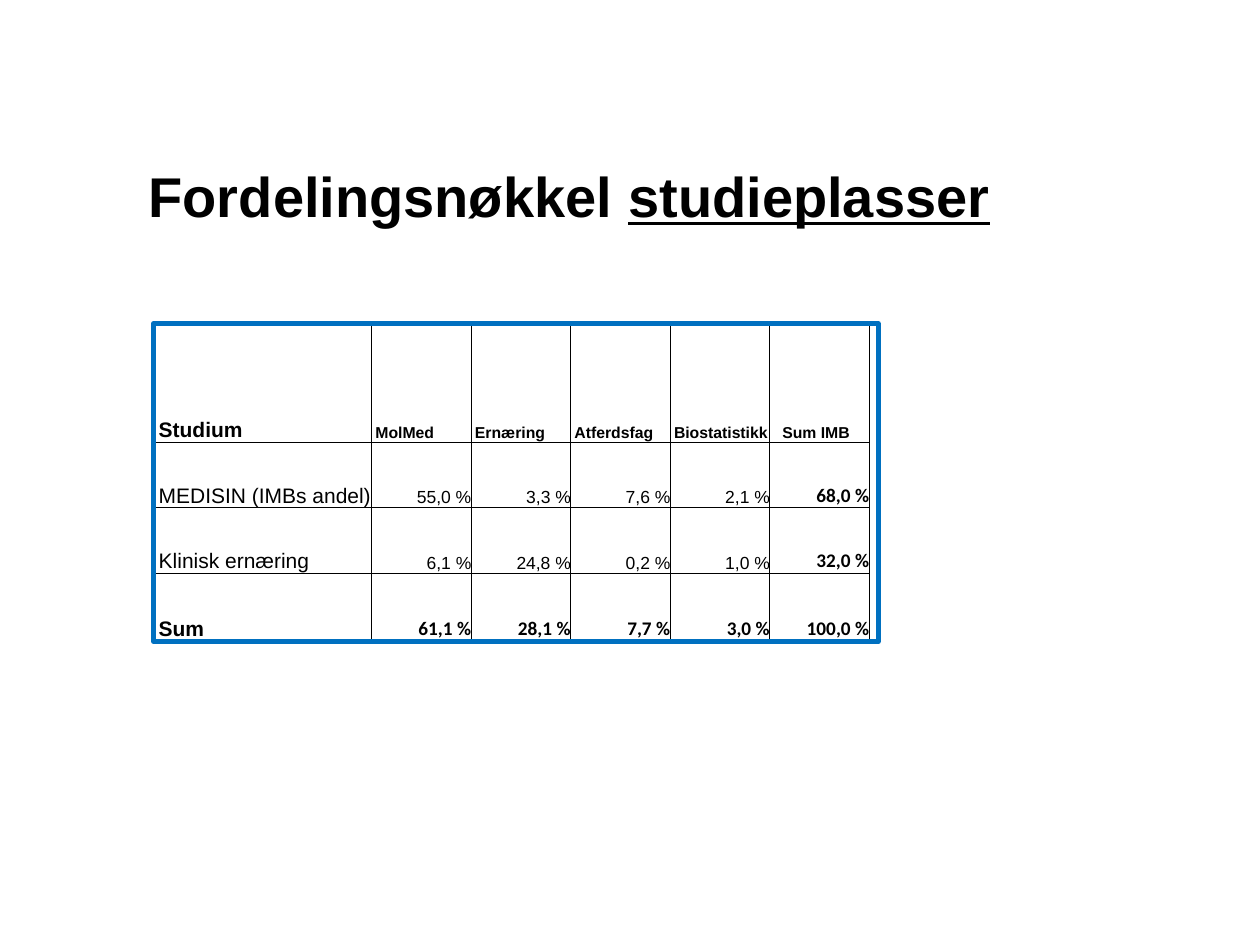
from dataclasses import dataclass

from lxml import etree
from pptx import Presentation, util as u
from pptx.dml.color import RGBColor
from pptx.enum import shapes, text
from pptx.oxml.ns import qn

COLORS = {"ink": "000000", "frame": "0070C0"}
LEFT, TOP = 1.22, 2.57
COLUMN_WIDTHS = [1.73] + [0.79] * 5
ROW_HEIGHTS = [0.94, 0.52, 0.52, 0.54]
FRAME_WIDTH = 5.75

HEADERS = ["Studium", "MolMed", "Ernæring", "Atferdsfag", "Biostatistikk", "Sum IMB"]
STUDIES = [
    ["MEDISIN (IMBs andel)", "55,0 %", "3,3 %", "7,6 %", "2,1 %", "68,0 %"],
    ["Klinisk ernæring", "6,1 %", "24,8 %", "0,2 %", "1,0 %", "32,0 %"],
    ["Sum", "61,1 %", "28,1 %", "7,7 %", "3,0 %", "100,0 %"],
]


@dataclass(frozen=True)
class CellStyle:
    size: float
    font: str = "Arial"
    bold: bool = False
    indent: float = 0
    align: text.PP_ALIGN = text.PP_ALIGN.LEFT


RIGHT = text.PP_ALIGN.RIGHT
LABEL = CellStyle(12, indent=0.04)
BOLD_LABEL = CellStyle(12, bold=True, indent=0.04)
HEADER = CellStyle(9, bold=True, indent=0.03)
SUM_HEADER = CellStyle(9, bold=True, indent=0.1)
SHARE = CellStyle(10, align=RIGHT)
TOTAL = CellStyle(11, "Calibri", bold=True, align=RIGHT)


def style_for(row: int, column: int, last_row: int, last_column: int) -> CellStyle:
    if column == 0:
        return BOLD_LABEL if row in (0, last_row) else LABEL
    if row == 0:
        return SUM_HEADER if column == last_column else HEADER
    return TOTAL if row == last_row or column == last_column else SHARE


def add_run(paragraph, words: str, size: float, font: str, bold: bool):
    run = paragraph.add_run()
    run.text = words
    run.font.size = u.Pt(size)
    run.font.name = font
    run.font.bold = bold
    run.font.color.rgb = RGBColor.from_string(COLORS["ink"])
    return run


def set_borders(cell, widths: dict[str, float]) -> None:
    """Add the side lines in points; must run before the cell gets a fill."""
    properties = cell._tc.get_or_add_tcPr()
    for side in ("L", "R", "T", "B"):
        line = etree.SubElement(properties, qn(f"a:ln{side}"), w=str(u.Pt(widths[side])))
        fill = etree.SubElement(line, qn("a:solidFill"))
        etree.SubElement(fill, qn("a:srgbClr"), val=COLORS["ink"])


def fill_cell(cell, words: str, style: CellStyle, borders: dict[str, float]) -> None:
    set_borders(cell, borders)
    cell.fill.background()
    cell.margin_left = u.Inches(style.indent)
    cell.margin_right = cell.margin_top = cell.margin_bottom = 0
    cell.vertical_anchor = text.MSO_ANCHOR.BOTTOM
    paragraph = cell.text_frame.paragraphs[0]
    paragraph.alignment = style.align
    add_run(paragraph, words, style.size, style.font, style.bold)


def add_title(slide) -> None:
    title = slide.shapes.title
    title.left, title.top = u.Inches(1.08), u.Inches(0.92)
    title.width, title.height = u.Inches(8.42), u.Inches(1.25)
    title.text_frame.vertical_anchor = text.MSO_ANCHOR.MIDDLE
    paragraph = title.text_frame.paragraphs[0]
    paragraph.alignment = text.PP_ALIGN.LEFT
    add_run(paragraph, "Fordelingsnøkkel ", 32, "Arial", True)
    add_run(paragraph, "studieplasser", 32, "Arial", True).font.underline = True


def add_study_table(slide) -> None:
    rows = [HEADERS] + STUDIES
    last_row, last_column = len(rows) - 1, len(HEADERS) - 1
    table = slide.shapes.add_table(
        len(rows), len(HEADERS), u.Inches(LEFT), u.Inches(TOP),
        u.Inches(sum(COLUMN_WIDTHS)), u.Inches(sum(ROW_HEIGHTS))).table
    table.first_row = table.horz_banding = False
    for column, width in zip(table.columns, COLUMN_WIDTHS):
        column.width = u.Inches(width)
    for row, height in zip(table.rows, ROW_HEIGHTS):
        row.height = u.Inches(height)
    for r, row_words in enumerate(rows):
        for c, words in enumerate(row_words):
            borders = {"L": 1 if c == 0 else 0.5, "R": 0.5,
                       "T": 0.5, "B": 1 if r == last_row else 0.5}
            fill_cell(table.cell(r, c), words,
                      style_for(r, c, last_row, last_column), borders)


def add_frame(slide) -> None:
    frame = slide.shapes.add_shape(
        shapes.MSO_SHAPE.RECTANGLE, u.Inches(LEFT), u.Inches(TOP),
        u.Inches(FRAME_WIDTH), u.Inches(sum(ROW_HEIGHTS)))
    frame.shadow.inherit = False
    frame.fill.background()
    frame.line.color.rgb = RGBColor.from_string(COLORS["frame"])
    frame.line.width = u.Pt(3)


def main() -> None:
    deck = Presentation()
    deck.slide_width, deck.slide_height = u.Inches(10), u.Inches(7.5)
    slide = deck.slides.add_slide(deck.slide_layouts[5])
    add_title(slide)
    add_study_table(slide)
    add_frame(slide)
    deck.save("out.pptx")


if __name__ == "__main__":
    main()
